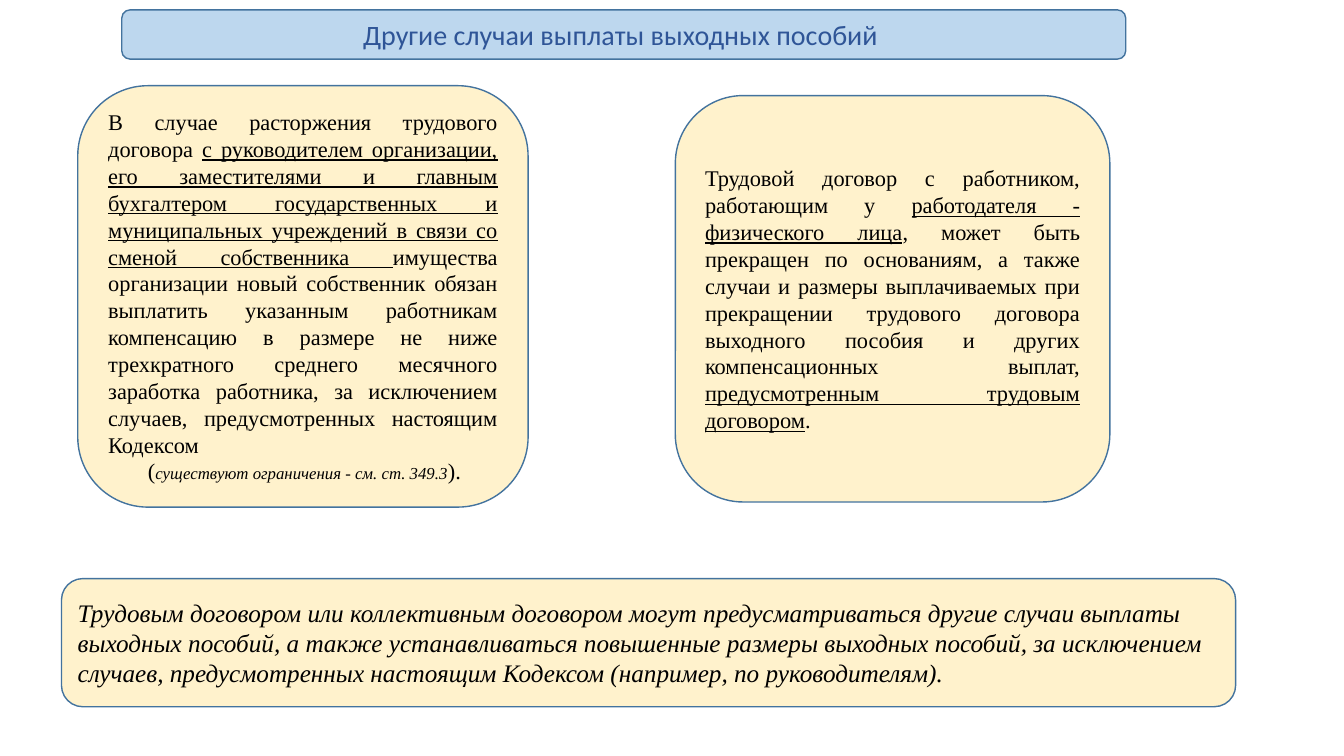
from pptx import Presentation
from pptx.dml.color import RGBColor
from pptx.enum.shapes import MSO_SHAPE
from pptx.enum.text import MSO_ANCHOR, PP_ALIGN
from pptx.util import Cm, Pt

ROUND = MSO_SHAPE.ROUNDED_RECTANGLE
MIDDLE = MSO_ANCHOR.MIDDLE
LEFT, CENTER, JUSTIFY = PP_ALIGN.LEFT, PP_ALIGN.CENTER, PP_ALIGN.JUSTIFY

COLORS = {"cream": "FFF2CC", "sky": "BDD7EE", "edge": "43739E",
          "black": "000000", "navy": "2F5597"}

# Text formats
BODY = {"name": "Times New Roman", "size": Pt(16)}
UNDER = {**BODY, "underline": True}
NOTE = {**BODY, "size": Pt(12), "italic": True}
CLOSE = {**BODY, "size": Pt(18), "italic": True}
TITLE = {"name": "Calibri", "size": Pt(20)}

# Paragraphs: (first-line indent in cm, runs)
CHIEFS = [
    (0, [
        ("В случае расторжения трудового договора ", BODY),
        ("с руководителем организации, его заместителями и главным бухгалтером "
         "государственных и муниципальных учреждений в связи со сменой "
         "собственника ", UNDER),
        ("имущества организации новый собственник обязан выплатить указанным "
         "работникам компенсацию в размере не ниже трехкратного среднего "
         "месячного заработка работника, за исключением случаев, "
         "предусмотренных настоящим Кодексом", BODY),
    ]),
    (1, [
        ("(", BODY),
        ("существуют ограничения - см. ст. 349.3", NOTE),
        (").", BODY),
    ]),
]
PERSON = [
    (0, [
        ("Трудовой договор с работником, работающим у ", BODY),
        ("работодателя - физического лица", UNDER),
        (", может быть прекращен по основаниям, а также случаи и размеры "
         "выплачиваемых при прекращении трудового договора выходного пособия "
         "и других компенсационных выплат, ", BODY),
        ("предусмотренным трудовым договором", UNDER),
        (".", BODY),
    ]),
]
OTHER = [
    (0, [
        ("Трудовым договором или коллективным договором могут "
         "предусматриваться другие случаи выплаты выходных пособий, а также "
         "устанавливаться повышенные размеры выходных пособий, за исключением "
         "случаев, предусмотренных настоящим Кодексом (например, по "
         "руководителям).", CLOSE),
    ]),
]
HEAD = [(0, [("Другие случаи выплаты выходных пособий ", TITLE)])]

# Panels: (left, top, width, height in cm), fill, text colour, alignment, text
PANELS = [
    ((1.96, 2.16, 11.35, 10.62), "cream", "black", JUSTIFY, CHIEFS),
    ((17.02, 2.41, 10.95, 10.24), "cream", "black", JUSTIFY, PERSON),
    ((1.55, 14.58, 29.59, 3.23), "cream", "black", LEFT, OTHER),
    ((3.07, 0.25, 25.3, 1.24), "sky", "navy", CENTER, HEAD),
]


def color(name):
    return RGBColor.from_string(COLORS[name])


def add_text(frame, paras, ink, align):
    frame.word_wrap = True
    frame.vertical_anchor = MIDDLE
    for i, (indent, runs) in enumerate(paras):
        para = frame.add_paragraph() if i else frame.paragraphs[0]
        para.alignment = align
        if indent:
            para._p.get_or_add_pPr().set("indent", str(Cm(indent)))
        for text, style in runs:
            run = para.add_run()
            run.text = text
            run.font.color.rgb = color(ink)
            for key, value in style.items():
                setattr(run.font, key, value)


def add_panel(slide, box, fill, ink, align, paras):
    panel = slide.shapes.add_shape(ROUND, *map(Cm, box))
    panel.shadow.inherit = False
    panel.fill.solid()
    panel.fill.fore_color.rgb = color(fill)
    panel.line.color.rgb = color("edge")
    panel.line.width = Pt(1)
    add_text(panel.text_frame, paras, ink, align)


def main():
    deck = Presentation()
    deck.slide_width, deck.slide_height = Cm(33.87), Cm(19.05)
    slide = deck.slides.add_slide(deck.slide_layouts[6])
    for panel in PANELS:
        add_panel(slide, *panel)
    deck.save("out.pptx")


if __name__ == "__main__":
    main()
